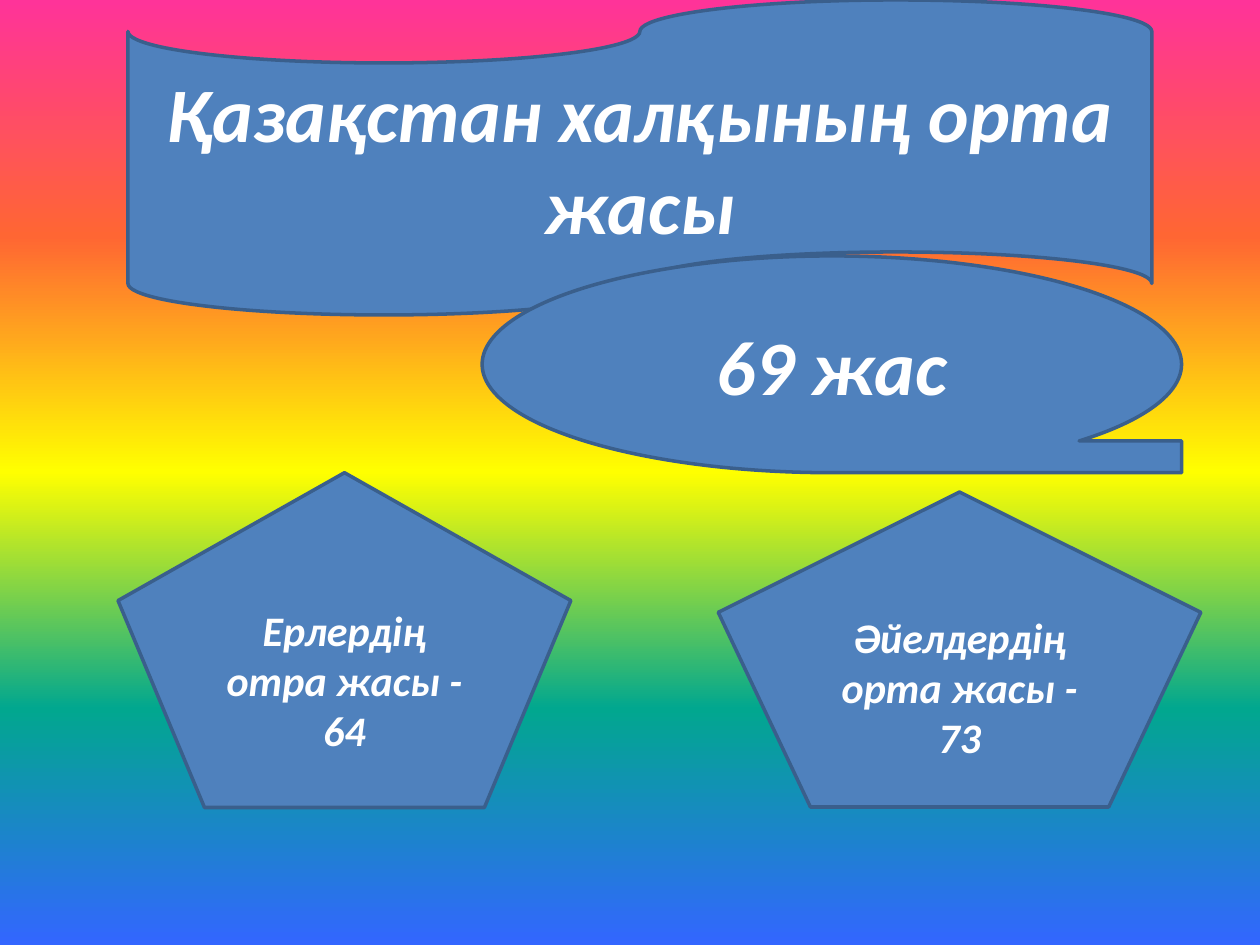
from copy import deepcopy
from dataclasses import dataclass

from pptx import Presentation
from pptx import util as u
from pptx.dml.color import RGBColor
from pptx.enum import shapes, text
from pptx.oxml.ns import qn

COLORS = {"fill": "4F81BD", "line": "3A5F8C", "text": "FFFFFF"}
RAINBOW = ["FF3399", "FF6633", "FFFF00", "01A78F", "3366FF"]
KIND = shapes.MSO_SHAPE


@dataclass
class Panel:
    kind: shapes.MSO_SHAPE
    left: float
    top: float
    width: float
    height: float
    label: str
    size: int


PANELS = [
    Panel(KIND.FLOWCHART_PUNCHED_TAPE, 2.58, 0, 20.64, 6.35,
          "Қазақстан халқының орта жасы", 44),
    Panel(KIND.FLOWCHART_SEQUENTIAL_ACCESS_STORAGE, 9.72, 5.16, 14.1, 4.37,
          "69 жас", 44),
    Panel(KIND.REGULAR_PENTAGON, 2.38, 9.53, 9.13, 6.75,
          "Ерлердің отра жасы - 64", 24),
    Panel(KIND.REGULAR_PENTAGON, 14.48, 9.92, 9.73, 6.35,
          "Әйелдердің орта жасы - 73", 24),
]


def rgb(name: str) -> RGBColor:
    return RGBColor.from_string(COLORS[name])


def paint_background(s, stops: list[str]) -> None:
    fill = s.background.fill
    fill.gradient()
    fill.gradient_angle = 270
    gs_lst = next(s._element.iter(qn("a:gsLst")))
    for _ in range(len(stops) - len(gs_lst)):
        gs_lst.append(deepcopy(gs_lst[0]))
    for i, (stop, color) in enumerate(zip(fill.gradient_stops, stops)):
        stop.position = i / (len(stops) - 1)
        stop.color.rgb = RGBColor.from_string(color)


def add_panel(s, panel: Panel) -> None:
    box = (u.Cm(v) for v in (panel.left, panel.top, panel.width, panel.height))
    sp = s.shapes.add_shape(panel.kind, *box)
    sp.shadow.inherit = False
    sp.fill.solid()
    sp.fill.fore_color.rgb = rgb("fill")
    sp.line.color.rgb = rgb("line")
    sp.line.width = u.Pt(2)
    tf = sp.text_frame
    tf.word_wrap = True
    tf.vertical_anchor = text.MSO_ANCHOR.MIDDLE
    p = tf.paragraphs[0]
    p.text = panel.label
    p.alignment = text.PP_ALIGN.CENTER
    p.font.name = "Calibri"
    p.font.size = u.Pt(panel.size)
    p.font.bold = p.font.italic = True
    p.font.color.rgb = rgb("text")


def main() -> None:
    prs = Presentation()
    prs.slide_width, prs.slide_height = u.Cm(25.4), u.Cm(19.05)
    s = prs.slides.add_slide(prs.slide_layouts[6])
    paint_background(s, RAINBOW)
    for panel in PANELS:
        add_panel(s, panel)
    prs.save("out.pptx")


if __name__ == "__main__":
    main()
